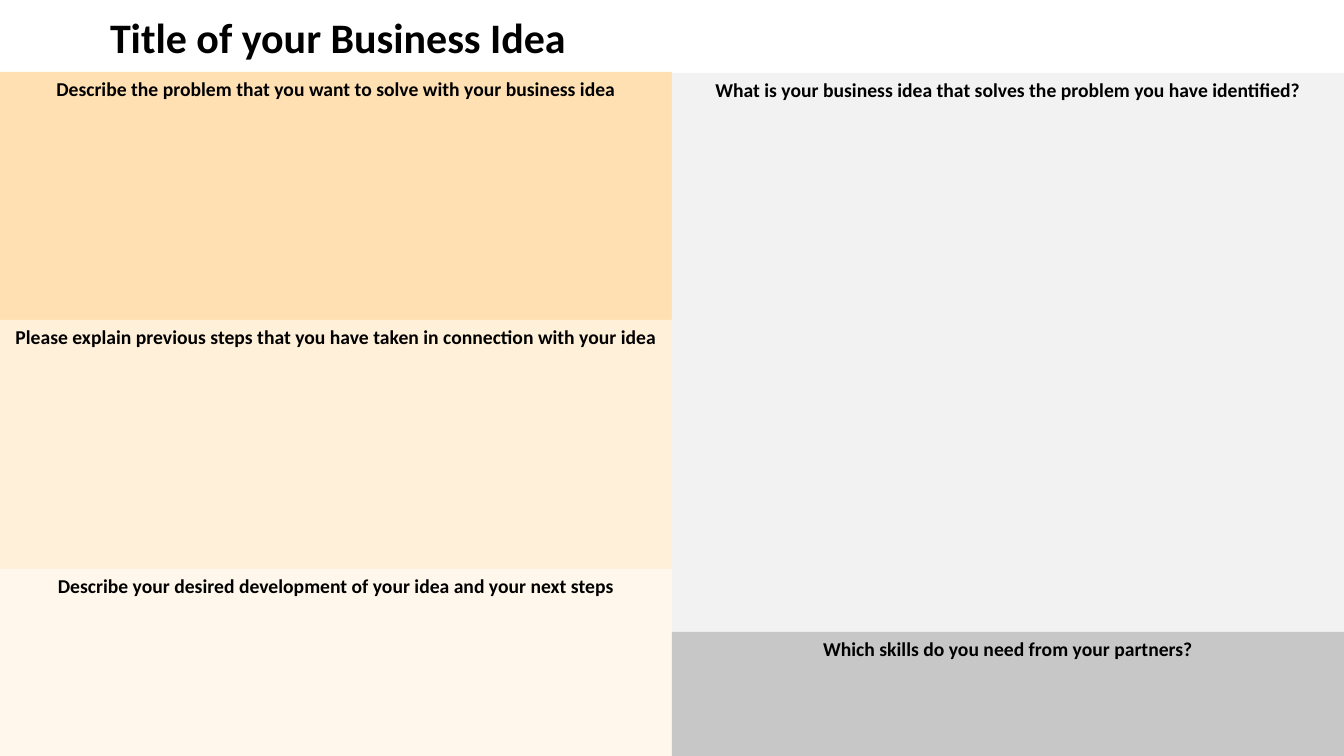
from pptx import Presentation
from pptx import util as u
from pptx.dml.color import RGBColor
from pptx.enum import shapes, text

WIDE, HIGH, HALF = 1344, 756, 672
HUES = {
    "white": "FFFFFF", "black": "000000", "peach": "FFE0B3", "cream": "FFF0D9",
    "ivory": "FFF7EB", "pale": "F2F2F2", "grey": "C7C7C7",
}
TITLE = "Title of your Business Idea"
COLS = [
    [
        (72, "peach", "Describe the problem that you want to solve with your business idea"),
        (320, "cream", "Please explain previous steps that you have taken in connection with your idea"),
        (569, "ivory", "Describe your desired development of your idea and your next steps"),
    ],
    [
        (73, "pale", "What is your business idea that solves the problem you have identified?"),
        (632, "grey", "Which skills do you need from your partners?"),
    ],
]
HEAD = {"name": "Calibri", "size": u.Pt(30), "bold": True}
BODY = {**HEAD, "size": u.Pt(14)}


def px(n):
    return round(n * 914400 / 100.8)


def rgb(hue):
    return RGBColor.from_string(HUES[hue])


def style(item, vals):
    for key, val in vals.items():
        setattr(item, key, val)


def dress(box, area, hue, words, font, align, frame):
    for key, val in zip(("left", "top", "width", "height"), area):
        setattr(box, key, px(val))
    box.fill.solid()
    box.fill.fore_color.rgb = rgb(hue)
    box.line.fill.background()
    style(box.text_frame, {"word_wrap": True, "auto_size": text.MSO_AUTO_SIZE.NONE, **frame})
    para = box.text_frame.paragraphs[0]
    para.alignment = align
    run = para.add_run()
    run.text = words
    style(run.font, font)
    run.font.color.rgb = rgb("black")


def main():
    deck = Presentation()
    deck.slide_width, deck.slide_height = px(WIDE), px(HIGH)
    slide = deck.slides.add_slide(deck.slide_layouts[5])
    dress(slide.shapes.title, (0, 0, 656, 73), "white", TITLE, HEAD, text.PP_ALIGN.LEFT,
          {"vertical_anchor": text.MSO_ANCHOR.MIDDLE, "margin_left": px(110)})
    for col, cells in enumerate(COLS):
        ends = [cell[0] for cell in cells[1:]] + [HIGH]
        for (top, hue, words), end in zip(cells, ends):
            box = slide.shapes.add_shape(shapes.MSO_SHAPE.RECTANGLE, 0, 0, 0, 0)
            box.shadow.inherit = False
            dress(box, (col * HALF, top, HALF, end - top), hue, words, BODY,
                  text.PP_ALIGN.CENTER, {"vertical_anchor": text.MSO_ANCHOR.TOP})
    deck.save("out.pptx")


if __name__ == "__main__":
    main()
